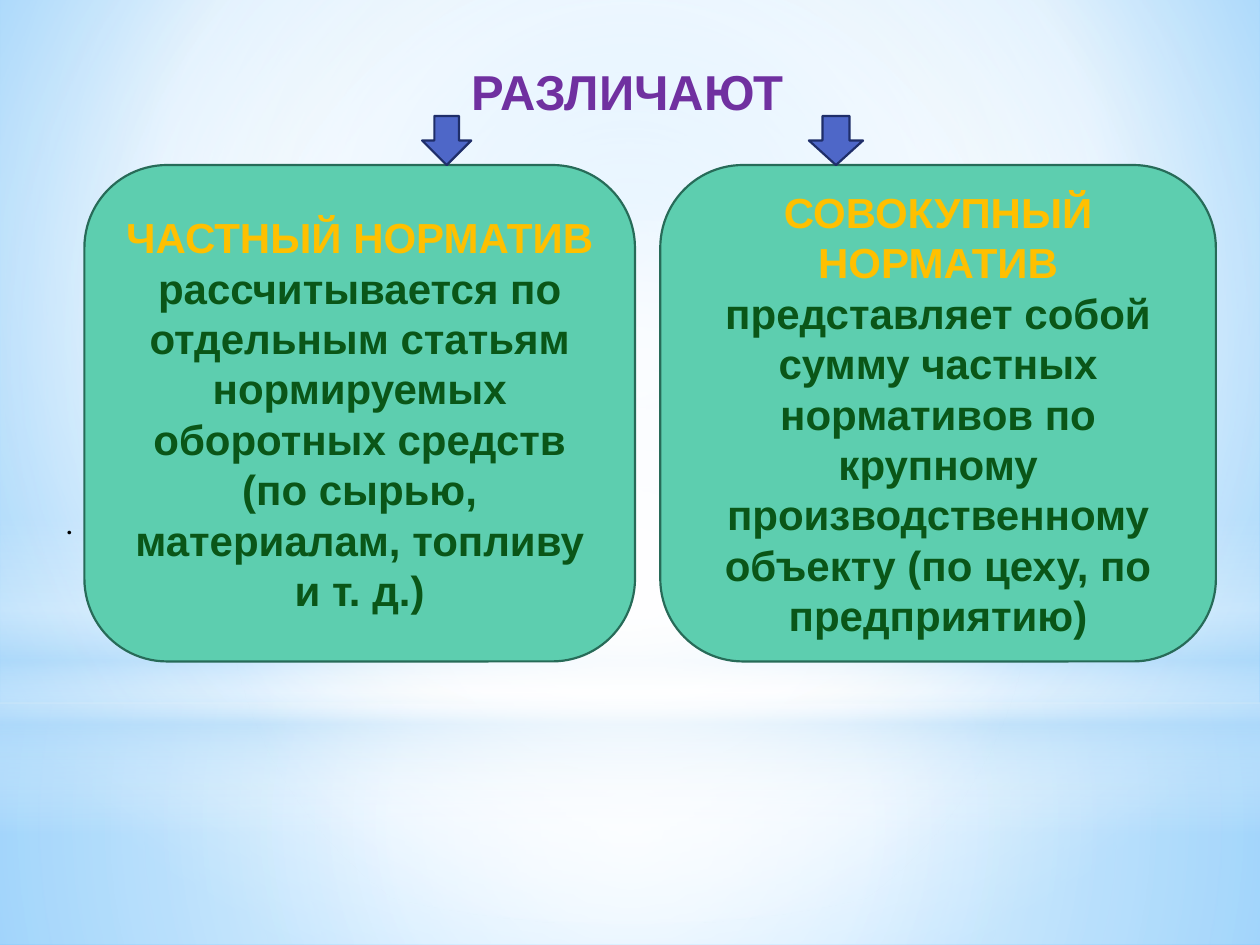
from lxml import etree
from pptx import Presentation
from pptx.dml.color import RGBColor
from pptx.enum.shapes import MSO_SHAPE
from pptx.enum.text import MSO_ANCHOR, PP_ALIGN
from pptx.oxml.ns import qn
from pptx.util import Inches, Pt

RECT, OVAL = MSO_SHAPE.RECTANGLE, MSO_SHAPE.OVAL
CARD, ARROW = MSO_SHAPE.ROUNDED_RECTANGLE, MSO_SHAPE.DOWN_ARROW
TOP, MIDDLE = MSO_ANCHOR.TOP, MSO_ANCHOR.MIDDLE
LEFT, CENTER = PP_ALIGN.LEFT, PP_ALIGN.CENTER

COLORS = {
    "sky": "9ED5FF", "deep_sky": "5BB9FF", "haze": "B4DCFA", "white": "FFFFFF",
    "title": "7030A0", "term": "FFC000", "definition": "0A5618", "black": "000000",
    "card": "5DCEAF", "card_line": "276B58",
    "arrow": "4E67C8", "arrow_line": "1F2E69",
}
CENTRE_FOCUS = (50, 50, 50, 50)


def rgb(name):
    return RGBColor.from_string(COLORS[name])


def set_gradient(fill, parent, stops, focus=None, angle=90):
    """Fill with (position, colour, opacity) stops: circular if focus is given, else linear."""
    fill.solid()
    gradient = etree.Element(qn("a:gradFill"), rotWithShape="1")
    stop_list = etree.SubElement(gradient, qn("a:gsLst"))
    for position, color, opacity in stops:
        stop = etree.SubElement(stop_list, qn("a:gs"), pos=str(position * 1000))
        tint = etree.SubElement(stop, qn("a:srgbClr"), val=COLORS[color])
        if opacity < 100:
            etree.SubElement(tint, qn("a:alpha"), val=str(opacity * 1000))
    if focus:
        circle = etree.SubElement(gradient, qn("a:path"), path="circle")
        sides = {side: str(share * 1000) for side, share in zip("ltrb", focus)}
        etree.SubElement(circle, qn("a:fillToRect"), **sides)
    else:
        etree.SubElement(gradient, qn("a:lin"), ang=str(angle * 60000), scaled="0")
    solid = parent.find(".//" + qn("a:solidFill"))
    solid.getparent().replace(solid, gradient)


def add_figure(slide, kind, box, fill=None, line=None):
    figure = slide.shapes.add_shape(kind, *map(Inches, box))
    figure.shadow.inherit = False
    if fill:
        figure.fill.solid()
        figure.fill.fore_color.rgb = rgb(fill)
    if line:
        figure.line.color.rgb = rgb(line)
        figure.line.width = Pt(1.25)
    else:
        figure.line.fill.background()
    return figure


def write(frame, text, *, size, color, font="Arial", bold=True, align=CENTER, anchor=TOP):
    """Append a run to the first paragraph of the frame."""
    frame.word_wrap = True
    frame.vertical_anchor = anchor
    paragraph = frame.paragraphs[0]
    paragraph.alignment = align
    run = paragraph.add_run()
    run.text = text
    run.font.name = font
    run.font.size = Pt(size)
    run.font.bold = bold
    run.font.color.rgb = rgb(color)


def add_label(slide, box, text, **style):
    label = slide.shapes.add_textbox(*map(Inches, box))
    write(label.text_frame, text, **style)


def paint_backdrop(slide):
    set_gradient(slide.background.fill, slide.element,
                 [(0, "sky", 100), (60, "white", 100), (100, "deep_sky", 100)],
                 (20, 10, 20, 60))
    layers = [
        (RECT, (0, 5.58, 10, 1.92), CENTRE_FOCUS,
         [(0, "white", 91), (37, "white", 76), (100, "haze", 79)]),
        (RECT, (0, 0, 10, 5.58), CENTRE_FOCUS,
         [(0, "white", 89), (48, "white", 62), (100, "haze", 79)]),
        (RECT, (0, 4.12, 10, 2.5), None,
         [(0, "white", 0), (29, "white", 30), (45, "haze", 40),
          (55, "white", 26), (65, "haze", 60), (100, "white", 0)]),
        (OVAL, (0, 1.75, 10, 5.58), CENTRE_FOCUS,
         [(0, "white", 100), (56, "white", 0)]),
    ]
    for kind, box, focus, stops in layers:
        layer = add_figure(slide, kind, box)
        set_gradient(layer.fill, layer.element.spPr, stops, focus)


def add_heading(slide, box):
    left, top, width, height = box
    add_label(slide, (left, top, width, 0.57), "РАЗЛИЧАЮТ ", size=28, color="title")
    add_label(slide, (left, top + height - 0.4, 0.4, 0.4), ".", size=18,
              color="black", font="Karla", bold=False, align=LEFT)


def add_norm(slide, box, arrow_left, arrow_width, term, definition):
    """Card with a definition, and the arrow that points down at its top edge."""
    arrow_height = 0.39
    card = add_figure(slide, CARD, box, "card", "card_line")
    for text, color in ((term, "term"), (definition, "definition")):
        write(card.text_frame, text, size=24, color=color, anchor=MIDDLE)
    add_figure(slide, ARROW, (arrow_left, box[1] - arrow_height, arrow_width, arrow_height),
               "arrow", "arrow_line")


def main():
    deck = Presentation()
    deck.slide_width, deck.slide_height = Inches(10), Inches(7.5)
    slide = deck.slides.add_slide(deck.slide_layouts[6])
    paint_backdrop(slide)
    add_heading(slide, (0.43, 0.44, 9.21, 3.9))
    add_norm(slide, (0.67, 1.31, 4.37, 3.94), 3.35, 0.39, "ЧАСТНЫЙ НОРМАТИВ ",
             "рассчитывается по отдельным статьям нормируемых оборотных средств "
             "(по сырью, материалам, топливу и т. д.)")
    add_norm(slide, (5.24, 1.31, 4.41, 3.94), 6.42, 0.43, "СОВОКУПНЫЙ НОРМАТИВ ",
             "представляет собой сумму частных нормативов по крупному "
             "производственному объекту (по цеху, по предприятию)")
    deck.save("out.pptx")


if __name__ == "__main__":
    main()
